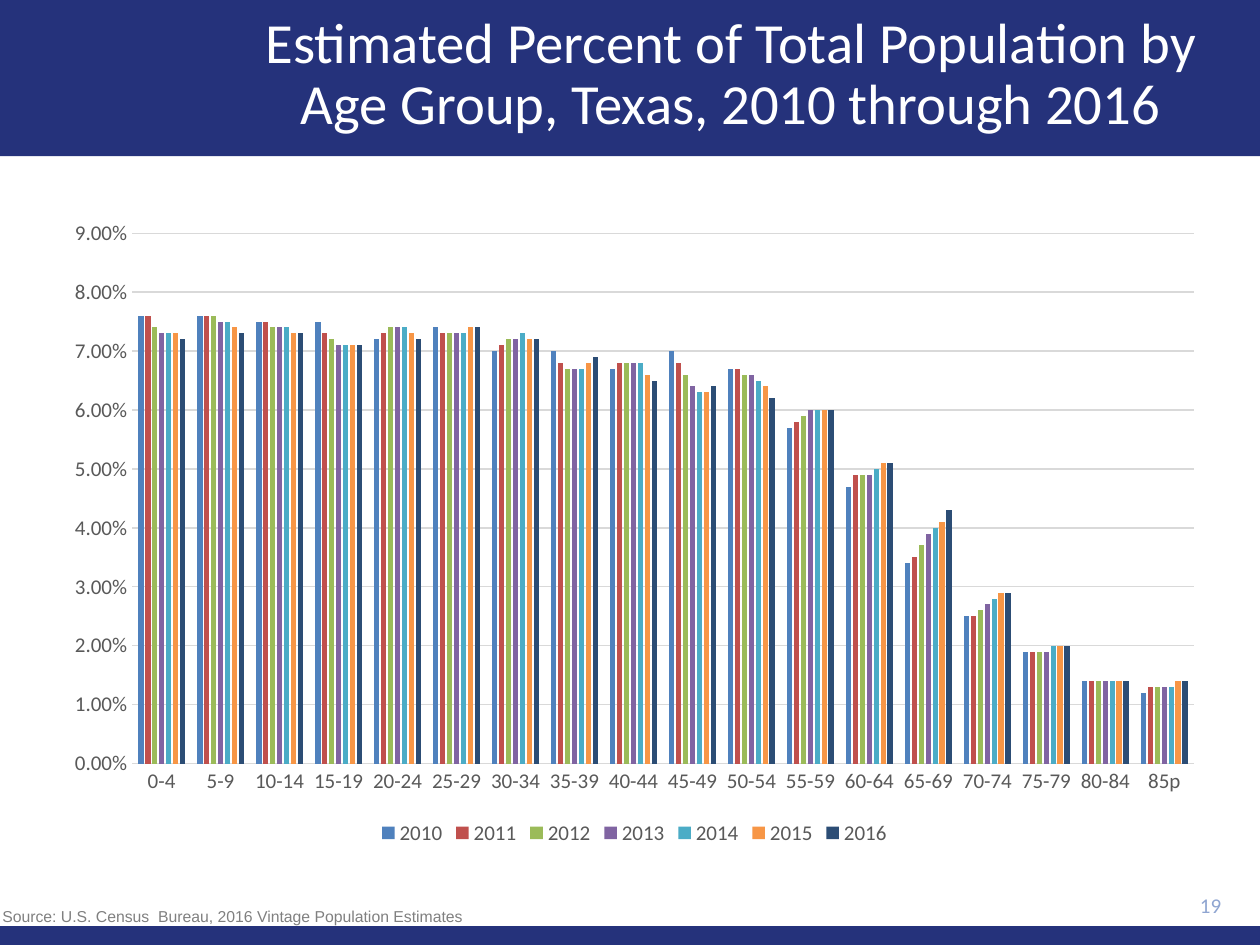
from pptx import Presentation
from pptx.chart.data import CategoryChartData
from pptx.dml.color import RGBColor
from pptx.enum.chart import XL_CHART_TYPE, XL_LEGEND_POSITION, XL_TICK_MARK
from pptx.enum.shapes import MSO_SHAPE
from pptx.enum.text import MSO_ANCHOR, PP_ALIGN
from pptx.util import Inches, Pt

NAVY = RGBColor(0x25, 0x32, 0x7B)
WHITE = RGBColor(0xFF, 0xFF, 0xFF)
PALE_BLUE = RGBColor(0x8F, 0xA5, 0xD1)
SOURCE_GRAY = RGBColor(0x80, 0x80, 0x80)
LABEL_GRAY = RGBColor(0x59, 0x59, 0x59)
GRID_GRAY = RGBColor(0xD9, 0xD9, 0xD9)
YEAR_COLORS = [RGBColor.from_string(code) for code in (
    "4F81BD", "C0504D", "9BBB59", "8064A2", "4BACC6", "F79646", "2C4D75")]

AGE_GROUPS = [f"{start}-{start + 4}" for start in range(0, 85, 5)] + ["85p"]
SHARE_BY_YEAR = {
    "2010": (0.076, 0.076, 0.075, 0.075, 0.072, 0.074, 0.07, 0.07, 0.067,
             0.07, 0.067, 0.057, 0.047, 0.034, 0.025, 0.019, 0.014, 0.012),
    "2011": (0.076, 0.076, 0.075, 0.073, 0.073, 0.073, 0.071, 0.068, 0.068,
             0.068, 0.067, 0.058, 0.049, 0.035, 0.025, 0.019, 0.014, 0.013),
    "2012": (0.074, 0.076, 0.074, 0.072, 0.074, 0.073, 0.072, 0.067, 0.068,
             0.066, 0.066, 0.059, 0.049, 0.037, 0.026, 0.019, 0.014, 0.013),
    "2013": (0.073, 0.075, 0.074, 0.071, 0.074, 0.073, 0.072, 0.067, 0.068,
             0.064, 0.066, 0.06, 0.049, 0.039, 0.027, 0.019, 0.014, 0.013),
    "2014": (0.073, 0.075, 0.074, 0.071, 0.074, 0.073, 0.073, 0.067, 0.068,
             0.063, 0.065, 0.06, 0.05, 0.04, 0.028, 0.02, 0.014, 0.013),
    "2015": (0.073, 0.074, 0.073, 0.071, 0.073, 0.074, 0.072, 0.068, 0.066,
             0.063, 0.064, 0.06, 0.051, 0.041, 0.029, 0.02, 0.014, 0.014),
    "2016": (0.072, 0.073, 0.073, 0.071, 0.072, 0.074, 0.072, 0.069, 0.065,
             0.064, 0.062, 0.06, 0.051, 0.043, 0.029, 0.02, 0.014, 0.014),
}


def apply_format(target, values):
    """Set each named attribute of the target."""
    for name, value in values.items():
        setattr(target, name, value)


class SlideBuilder:
    """Hold the shared style and the slide being built."""

    font_name = "Calibri"
    label_size = Pt(12)

    def __init__(self, slide):
        self.slide = slide

    def style_font(self, font, size, color, name=None):
        """Apply size, typeface and color to a font."""
        apply_format(font, {"size": size, "name": name or self.font_name})
        font.color.rgb = color

    def add_band(self, top, height):
        """Add a full-width navy band."""
        shape = self.slide.shapes.add_shape(
            MSO_SHAPE.RECTANGLE, 0, Inches(top), Inches(10), Inches(height))
        shape.shadow.inherit = False
        shape.fill.solid()
        shape.fill.fore_color.rgb = NAVY
        shape.line.fill.background()

    def add_text(self, text, box, size, color, frame_format, paragraph_format, name=None):
        """Add a one-paragraph text box."""
        shape = self.slide.shapes.add_textbox(*map(Inches, box))
        apply_format(shape.text_frame, {"word_wrap": True, **frame_format})
        paragraph = shape.text_frame.paragraphs[0]
        apply_format(paragraph, paragraph_format)
        run = paragraph.add_run()
        run.text = text
        self.style_font(run.font, Pt(size), color, name)

    def style_axis(self, axis):
        """Remove tick marks and style the labels of an axis."""
        apply_format(axis, {"major_tick_mark": XL_TICK_MARK.NONE,
                            "minor_tick_mark": XL_TICK_MARK.NONE})
        self.style_font(axis.tick_labels.font, self.label_size, LABEL_GRAY)

    def style_line(self, line):
        """Draw a thin gray line."""
        line.color.rgb = GRID_GRAY
        line.width = Pt(0.75)

    def add_column_chart(self, box):
        """Add the clustered columns of population share."""
        chart_data = CategoryChartData(number_format="0.00%")
        chart_data.categories = AGE_GROUPS
        for year, shares in SHARE_BY_YEAR.items():
            chart_data.add_series(year, shares)
        chart = self.slide.shapes.add_chart(
            XL_CHART_TYPE.COLUMN_CLUSTERED, *map(Inches, box), chart_data).chart
        self.style_font(chart.font, Pt(10), RGBColor(0, 0, 0))
        apply_format(chart, {"has_title": False, "has_legend": True})
        apply_format(chart.legend, {"position": XL_LEGEND_POSITION.BOTTOM,
                                    "include_in_layout": False})
        self.style_font(chart.legend.font, self.label_size, LABEL_GRAY)

        plot = chart.plots[0]
        apply_format(plot, {"gap_width": 219, "overlap": -27, "vary_by_categories": False})
        for series, color in zip(plot.series, YEAR_COLORS):
            series.format.fill.solid()
            series.format.fill.fore_color.rgb = color

        self.style_axis(chart.category_axis)
        self.style_line(chart.category_axis.format.line)
        value_axis = chart.value_axis
        self.style_axis(value_axis)
        apply_format(value_axis, {"minimum_scale": 0, "maximum_scale": 0.09,
                                  "major_unit": 0.01, "has_major_gridlines": True})
        apply_format(value_axis.tick_labels, {"number_format": "0.00%",
                                              "number_format_is_linked": False})
        value_axis.format.line.fill.background()
        self.style_line(value_axis.major_gridlines.format.line)


def main():
    """Build and save the population slide."""
    presentation = Presentation()
    apply_format(presentation, {"slide_width": Inches(10), "slide_height": Inches(7.5)})
    builder = SlideBuilder(presentation.slides.add_slide(presentation.slide_layouts[6]))
    middle = {"vertical_anchor": MSO_ANCHOR.MIDDLE}
    builder.add_band(0, 1.24)
    builder.add_band(7.35, 0.15)
    builder.add_text(
        "Estimated Percent of Total Population by Age Group, Texas, 2010 through 2016",
        (1.7, 0.1, 8.2, 1), 32.4, WHITE, middle,
        {"alignment": PP_ALIGN.CENTER, "line_spacing": 0.9})
    builder.add_column_chart((0.41, 1.65, 9.25, 5.1))
    builder.add_text("19", (8.9, 7.01, 0.89, 0.34), 12, PALE_BLUE, middle,
                     {"alignment": PP_ALIGN.RIGHT})
    builder.add_text("Source: U.S. Census  Bureau, 2016 Vintage Population Estimates",
                     (-0.08, 7.14, 5, 0.26), 9, SOURCE_GRAY, {},
                     {"line_spacing": 1.07}, "Arial")
    presentation.save("out.pptx")


if __name__ == "__main__":
    main()
